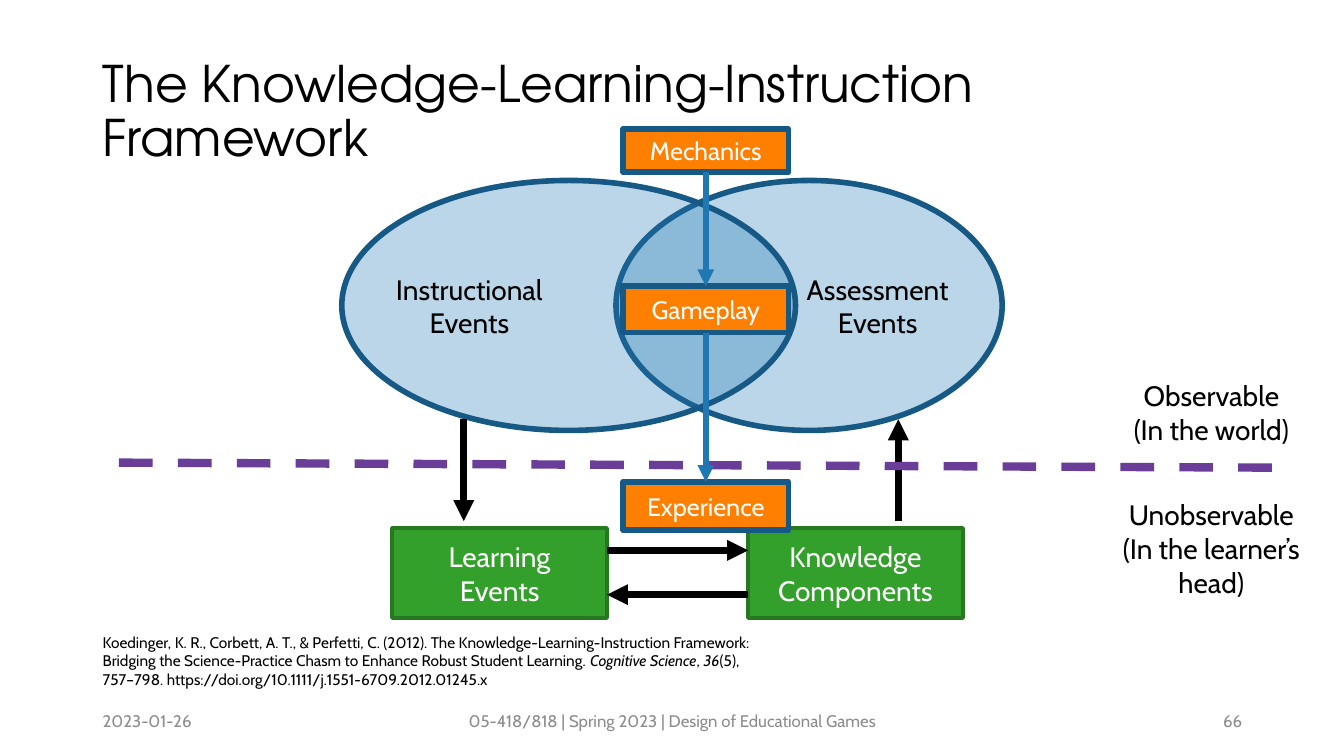
from dataclasses import dataclass

from lxml import etree
from pptx import Presentation
from pptx.dml.color import RGBColor
from pptx.enum.dml import MSO_LINE
from pptx.enum.shapes import MSO_CONNECTOR, MSO_SHAPE
from pptx.enum.text import MSO_ANCHOR, MSO_AUTO_SIZE, PP_ALIGN
from pptx.oxml.ns import qn
from pptx.util import Inches, Pt

OVAL, RECTANGLE = MSO_SHAPE.OVAL, MSO_SHAPE.RECTANGLE
STRAIGHT, DASH = MSO_CONNECTOR.STRAIGHT, MSO_LINE.DASH
LEFT, CENTER, RIGHT = PP_ALIGN.LEFT, PP_ALIGN.CENTER, PP_ALIGN.RIGHT
TOP, MIDDLE = MSO_ANCHOR.TOP, MSO_ANCHOR.MIDDLE
FIXED = MSO_AUTO_SIZE.NONE
TITLE_ONLY = 5


@dataclass(frozen=True)
class Theme:
    heading_font: str = "TeX Gyre Adventor"
    body_font: str = "Cabin"
    title_size: int = 36
    label_size: int = 20
    stage_size: int = 18
    footer_size: int = 12
    citation_size: int = 11
    black: str = "000000"
    white: str = "FFFFFF"
    gray: str = "8C8C8C"
    blue: str = "1F78B4"
    dark_blue: str = "175985"
    green: str = "33A02C"
    dark_green: str = "267821"
    orange: str = "FF7F00"
    purple: str = "6A3D99"


THEME = Theme()


def rgb(color):
    return RGBColor.from_string(color)


def write_text(shape, text, size=THEME.label_size, color=THEME.black,
               font=THEME.body_font, align=CENTER, anchor=MIDDLE, spacing=None):
    frame = shape.text_frame
    frame.word_wrap = True
    frame.auto_size = FIXED
    frame.vertical_anchor = anchor
    for index, line in enumerate(text.split("\n")):
        paragraph = frame.add_paragraph() if index else frame.paragraphs[0]
        paragraph.alignment = align
        paragraph.line_spacing = spacing
        for position, part in enumerate(line.split("*")):
            run = paragraph.add_run()
            run.text = part
            run.font.size = Pt(size)
            run.font.name = font
            run.font.color.rgb = rgb(color)
            if position % 2:
                run.font.italic = True


def add_label(shapes, box, text, **text_format):
    label = shapes.add_textbox(*map(Inches, box))
    write_text(label, text, **text_format)


def add_block(shapes, kind, box, fill, outline, width, alpha=None):
    block = shapes.add_shape(kind, *map(Inches, box))
    block.shadow.inherit = False
    block.fill.solid()
    block.fill.fore_color.rgb = rgb(fill)
    block.line.color.rgb = rgb(outline)
    block.line.width = Pt(width)
    if alpha:
        color = block.fill._xPr.find(f"{qn('a:solidFill')}/{qn('a:srgbClr')}")
        etree.SubElement(color, qn("a:alpha"), val=str(alpha * 1000))
    return block


def add_line(shapes, start, end, color, width, dash=None, arrow=True):
    connector = shapes.add_connector(STRAIGHT, *map(Inches, (*start, *end)))
    connector.line.color.rgb = rgb(color)
    connector.line.width = Pt(width)
    if dash:
        connector.line.dash_style = dash
    if arrow:
        etree.SubElement(connector.line._get_or_add_ln(), qn("a:tailEnd"), type="triangle")
    etree.SubElement(connector._element.spPr, qn("a:effectLst"))


def add_title(slide, box):
    title = slide.shapes.title
    title.left, title.top, title.width, title.height = map(Inches, box)
    write_text(title, "The Knowledge-Learning-Instruction Framework", size=THEME.title_size,
               font=THEME.heading_font, align=LEFT, spacing=0.9)


def add_framework(slide, box):
    left, top, width, height = box
    shapes = slide.shapes.add_group_shape().shapes
    oval_height, block_width, block_height = 2.48, 2.13, 0.89
    block_top = top + height - block_height
    learning_left, knowledge_left = left + 0.5, left + 4.03

    for oval_left, oval_width in ((left + width - 3.83, 3.83), (left, 4.5)):
        add_block(shapes, OVAL, (oval_left, top, oval_width, oval_height),
                  THEME.blue, THEME.dark_blue, 4, alpha=30)
    for block_left, text in ((learning_left, "Learning\nEvents"),
                             (knowledge_left, "Knowledge\nComponents")):
        block = add_block(shapes, RECTANGLE, (block_left, block_top, block_width, block_height),
                          THEME.green, THEME.dark_green, 3)
        write_text(block, text, color=THEME.white)
    for label_left, text in ((left + 0.24, "Instructional\nEvents"),
                             (left + 4.29, "Assessment\nEvents")):
        add_label(shapes, (label_left, top + 0.86, 2.05, 0.76), text, anchor=TOP)

    upper, lower = top + 2.37, block_top - 0.07
    inner_left, inner_right = learning_left + block_width, knowledge_left
    down_x, up_x = left + 1.21, left + 5.52
    right_y, left_y = block_top + 0.22, block_top + 0.66
    for start, end in (((down_x, upper), (down_x, lower)),
                       ((up_x, lower), (up_x, upper)),
                       ((inner_left, right_y), (inner_right, right_y)),
                       ((inner_right, left_y), (inner_left, left_y))):
        add_line(shapes, start, end, THEME.black, 5)


def add_observability(slide, box):
    left, top, width, height = box
    add_line(slide.shapes, (left, top + 0.88), (left + 11.57, top + 0.93),
             THEME.purple, 6, dash=DASH, arrow=False)
    label_width = 2.11
    label_left = left + width - label_width
    add_label(slide.shapes, (label_left, top, label_width, 0.77),
              "Observable\n(In the world)", anchor=TOP)
    add_label(slide.shapes, (label_left, top + height - 1.11, label_width, 1.11),
              "Unobservable\n(In the learner’s head)", anchor=TOP)


def add_game_stages(slide, box):
    left, top, width, height = box
    stages = (("Mechanics", 0, 0.43), ("Gameplay", 1.56, 0.46), ("Experience", height - 0.48, 0.48))
    for text, offset, stage_height in stages:
        block = add_block(slide.shapes, RECTANGLE, (left, top + offset, width, stage_height),
                          THEME.orange, THEME.dark_blue, 4)
        write_text(block, text, size=THEME.stage_size, color=THEME.white)
    center = left + width / 2
    for (_, offset, stage_height), (_, next_offset, _) in zip(stages, stages[1:]):
        add_line(slide.shapes, (center, top + offset + stage_height),
                 (center, top + next_offset), THEME.blue, 4)


def add_citation(slide, box):
    add_label(slide.shapes, box,
              "Koedinger, K. R., Corbett, A. T., & Perfetti, C. (2012). "
              "The Knowledge-Learning-Instruction Framework: Bridging the Science-Practice Chasm "
              "to Enhance Robust Student Learning. *Cognitive Science*, *36*(5), 757–798. "
              "https://doi.org/10.1111/j.1551-6709.2012.01245.x",
              size=THEME.citation_size, align=LEFT, anchor=TOP)


def add_footer(slide, box):
    left, top, width, height = box
    side, middle = 3, 4.5
    for part_left, part_width, text, align in (
            (left, side, "2023-01-26", LEFT),
            (left + (width - middle) / 2, middle,
             "05-418/818 | Spring 2023 | Design of Educational Games", CENTER),
            (left + width - side, side, "66", RIGHT)):
        add_label(slide.shapes, (part_left, top, part_width, height), text,
                  size=THEME.footer_size, color=THEME.gray, align=align)


def main():
    presentation = Presentation()
    presentation.slide_width, presentation.slide_height = Inches(13.33), Inches(7.5)
    slide = presentation.slides.add_slide(presentation.slide_layouts[TITLE_ONLY])
    add_title(slide, (0.92, 0.4, 11.5, 1.45))
    add_framework(slide, (3.39, 1.79, 6.55, 4.34))
    add_observability(slide, (1.18, 3.71, 11.89, 2.29))
    add_citation(slide, (0.92, 6.23, 6.67, 0.84))
    add_game_stages(slide, (6.18, 1.28, 1.64, 3.98))
    add_footer(slide, (0.92, 6.95, 11.5, 0.4))
    presentation.save("out.pptx")


if __name__ == "__main__":
    main()
